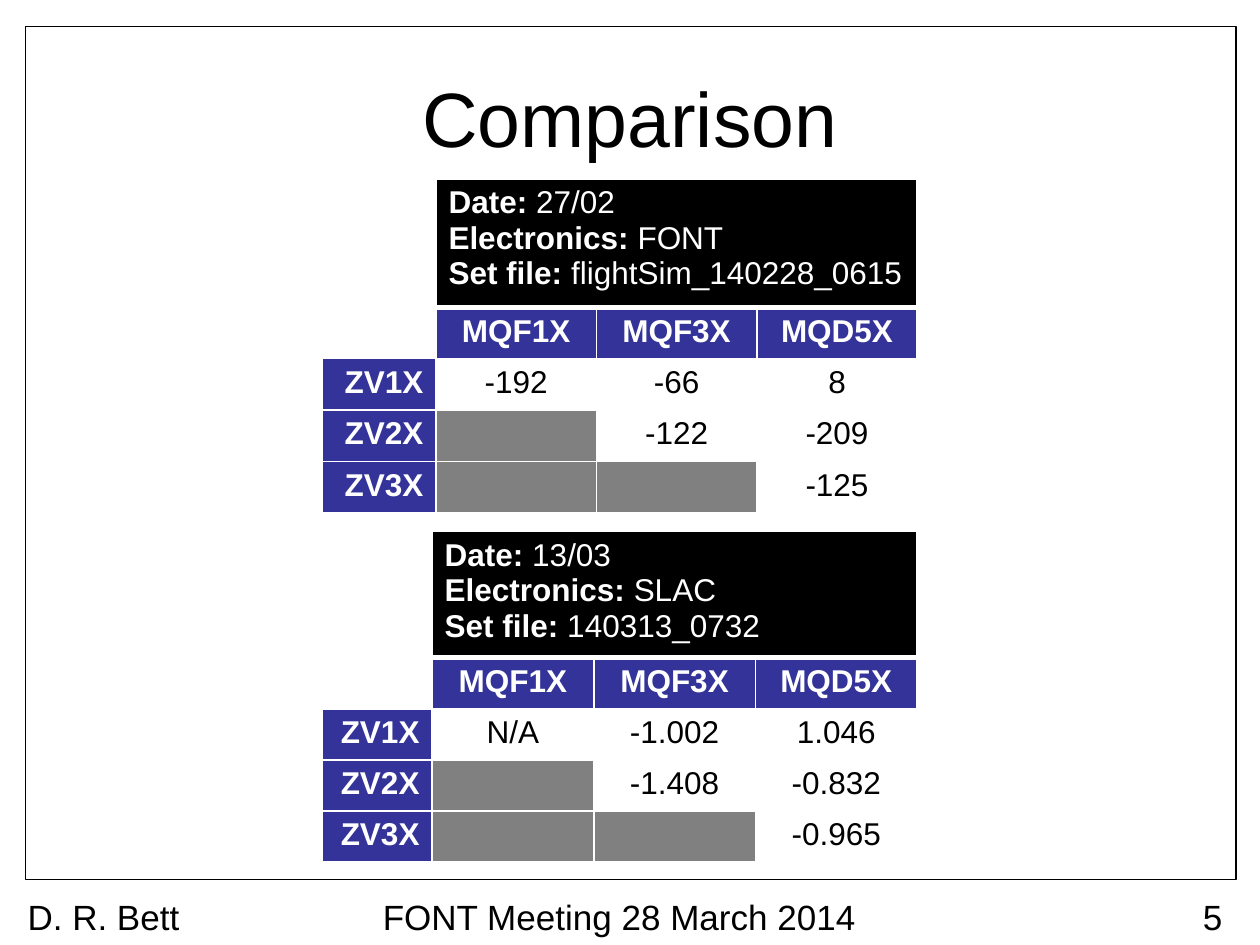
from lxml import etree
from pptx import Presentation
from pptx.dml.color import RGBColor
from pptx.enum.shapes import MSO_SHAPE
from pptx.enum.text import MSO_ANCHOR, PP_ALIGN
from pptx.oxml.ns import qn
from pptx.util import Inches, Pt

COLORS = {"ink": "000000", "paper": "FFFFFF", "header": "333399", "blank": "808080"}
FONT = "Arial"
MAGNETS = ["MQF1X", "MQF3X", "MQD5X"]
CORRECTORS = ["ZV1X", "ZV2X", "ZV3X"]


def color(name):
    return RGBColor.from_string(COLORS[name])


def style_font(font, size, color_name, bold=False):
    font.name = FONT
    font.size = Pt(size)
    font.bold = bold
    font.color.rgb = color(color_name)


def add_label(slide, box, text, size, align, anchor=MSO_ANCHOR.TOP):
    label = slide.shapes.add_textbox(*map(Inches, box))
    frame = label.text_frame
    frame.word_wrap = True
    frame.vertical_anchor = anchor
    paragraph = frame.paragraphs[0]
    paragraph.text = text
    paragraph.alignment = align
    style_font(paragraph.font, size, "ink")


def add_page_frame(slide, box):
    border = slide.shapes.add_shape(MSO_SHAPE.RECTANGLE, *map(Inches, box))
    border.shadow.inherit = False
    border.fill.background()
    border.line.color.rgb = color("ink")
    border.line.width = Pt(0.75)


def add_footer(slide, box):
    left, top, width, height = box
    add_label(slide, (left, top, 1.42, height), "D. R. Bett", 20, PP_ALIGN.LEFT)
    add_label(slide, (left + 1.41, top, 6.77, height),
              "FONT Meeting 28 March 2014", 20, PP_ALIGN.CENTER)
    add_label(slide, (left + width - 0.55, top, 0.55, height), "5", 20, PP_ALIGN.RIGHT)


def set_borders(cell, widths):
    properties = cell._tc.get_or_add_tcPr()
    for side, width in widths.items():
        line = etree.SubElement(properties, qn(f"a:ln{side}"), w=str(Pt(width)))
        fill = etree.SubElement(line, qn("a:solidFill"))
        etree.SubElement(fill, qn("a:srgbClr"), val=COLORS["paper"])


def fill_cell(cell, fill_name, text="", align=PP_ALIGN.CENTER, text_color="paper", bold=True):
    cell.fill.solid()
    cell.fill.fore_color.rgb = color(fill_name)
    paragraph = cell.text_frame.paragraphs[0]
    paragraph.text = text
    paragraph.alignment = align
    style_font(paragraph.font, 18, text_color, bold)


def write_field(paragraph, name, value):
    for text, bold in ((f"{name}: ", True), (value, False)):
        run = paragraph.add_run()
        run.text = text
        style_font(run.font, 18, "paper", bold)


def write_run_details(cell, date, electronics, set_file):
    cell.fill.solid()
    cell.fill.fore_color.rgb = color("ink")
    frame = cell.text_frame
    first = frame.paragraphs[0]
    write_field(first, "Date", date)
    first.add_line_break()
    write_field(first, "Electronics", electronics)
    write_field(frame.add_paragraph(), "Set file", set_file)


def add_results(slide, box, label_width, details_height, details, values):
    left, top, width, height = box
    table = slide.shapes.add_table(5, 4, *map(Inches, box)).table
    table.first_row = False
    table.horz_banding = False
    for index, column in enumerate(table.columns):
        column.width = Inches((width - label_width) / 3 if index else label_width)
    for index, row in enumerate(table.rows):
        row.height = Inches((height - details_height) / 4 if index else details_height)

    for row in range(5):
        for column in range(4):
            set_borders(table.cell(row, column), {
                "L": 1, "R": 1, "T": 3 if row == 1 else 1, "B": 3 if row == 0 else 1})

    for row in range(2):
        fill_cell(table.cell(row, 0), "paper")
    table.cell(0, 1).merge(table.cell(0, 3))
    write_run_details(table.cell(0, 1), *details)

    for column, magnet in enumerate(MAGNETS, 1):
        fill_cell(table.cell(1, column), "header", magnet)
    for row, (corrector, readings) in enumerate(zip(CORRECTORS, values), 2):
        fill_cell(table.cell(row, 0), "header", corrector, PP_ALIGN.RIGHT)
        for column, reading in enumerate(readings, 1):
            fill_cell(table.cell(row, column), "paper" if reading else "blank",
                      reading, text_color="ink", bold=False)


def main():
    deck = Presentation()
    deck.slide_width = Inches(10)
    deck.slide_height = Inches(7.5)
    slide = deck.slides.add_slide(deck.slide_layouts[6])
    add_page_frame(slide, (0.2, 0.21, 9.61, 6.77))
    add_label(slide, (0.5, 0.3, 9, 1.25), "Comparison", 44, PP_ALIGN.CENTER, MSO_ANCHOR.MIDDLE)
    add_results(slide, (2.56, 4.22, 4.72, 2.56), 0.87, 0.94,
                ("13/03", "SLAC", "140313_0732"),
                [("N/A", "-1.002", "1.046"), ("", "-1.408", "-0.832"), ("", "", "-0.965")])
    add_footer(slide, (0.12, 7.06, 9.68, 0.32))
    add_results(slide, (2.56, 1.42, 4.72, 2.65), 0.9, 1.02,
                ("27/02", "FONT", "flightSim_140228_0615"),
                [("-192", "-66", "8"), ("", "-122", "-209"), ("", "", "-125")])
    deck.save("out.pptx")


if __name__ == "__main__":
    main()
